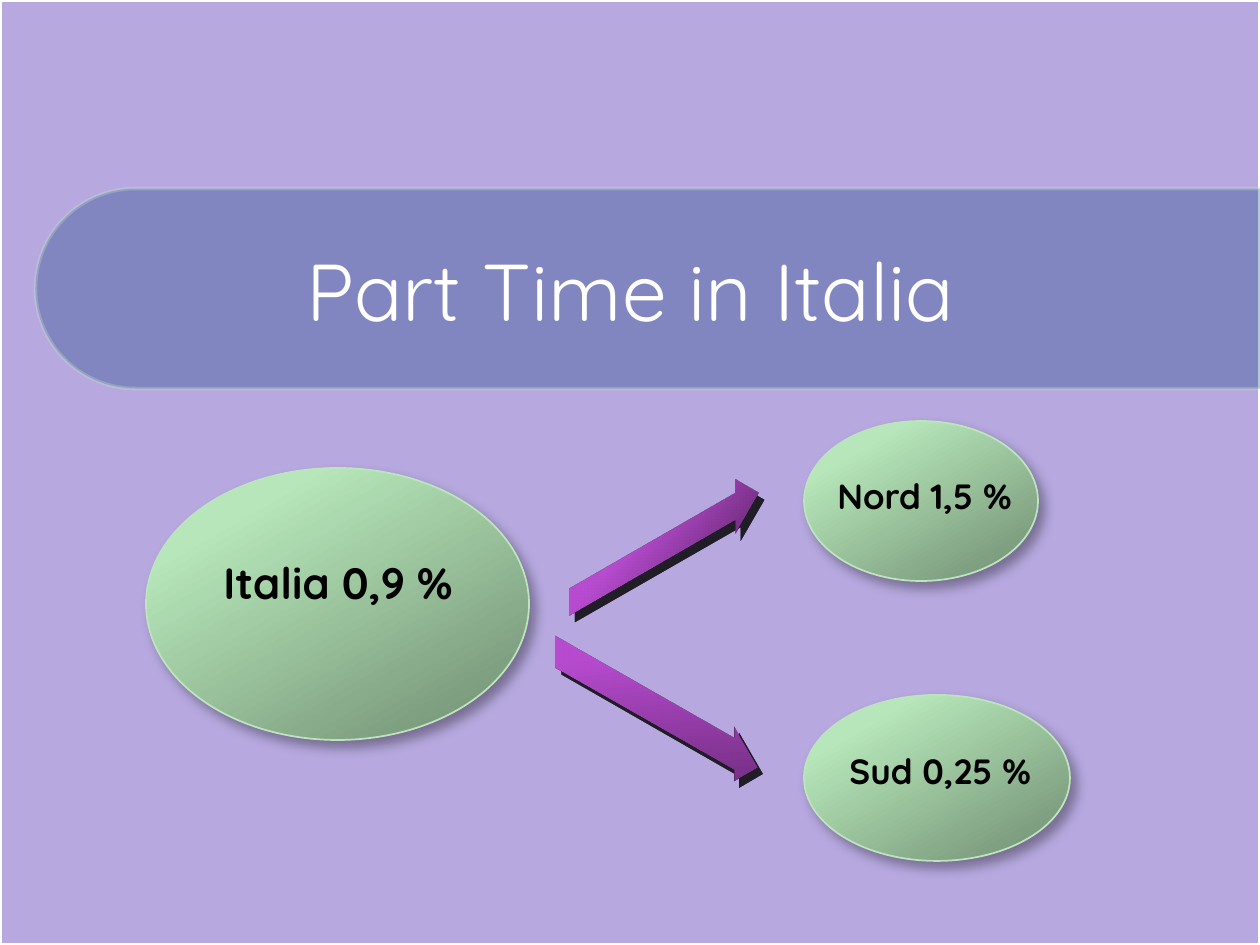
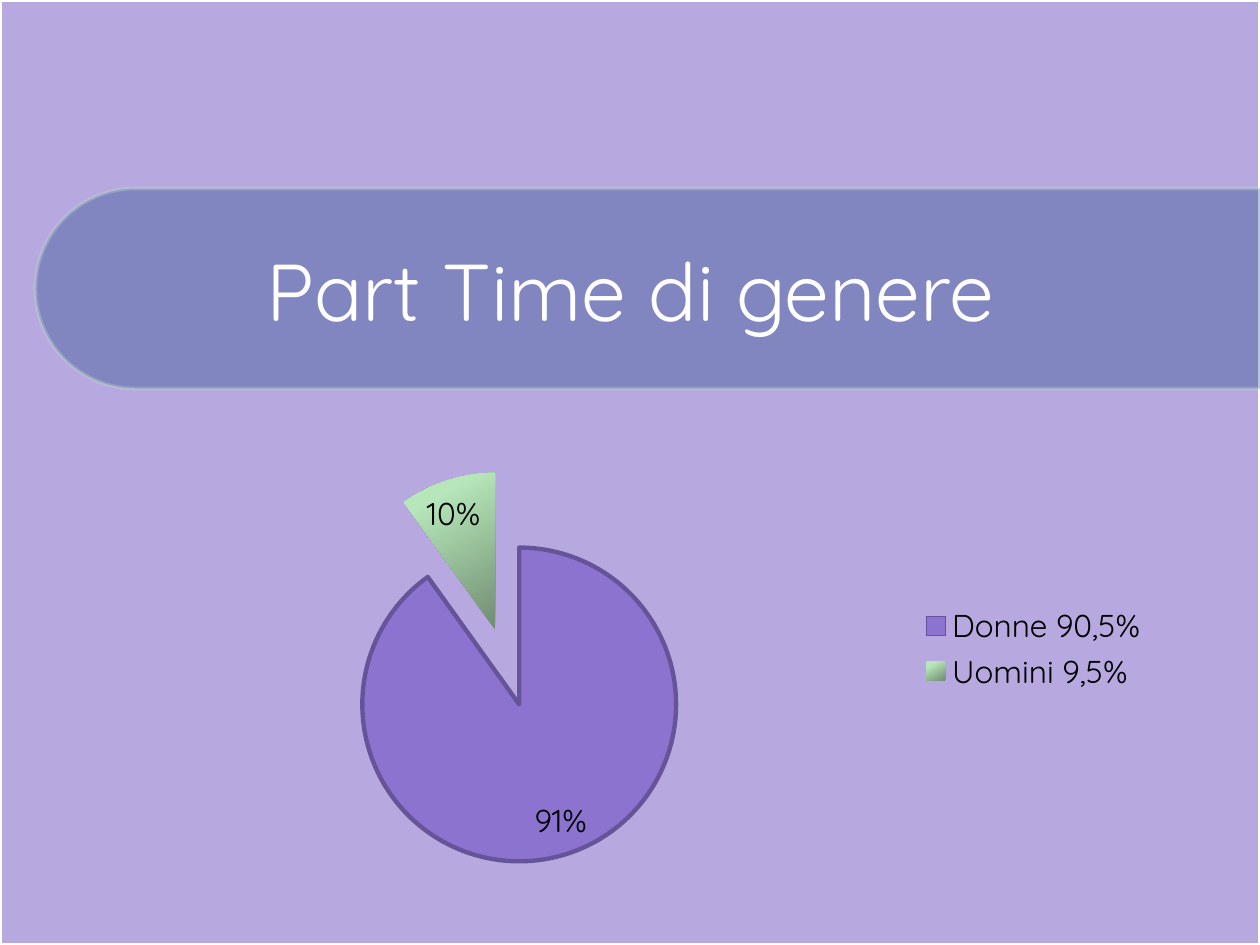
from pptx import Presentation
from pptx.chart.data import CategoryChartData
from pptx.dml.color import RGBColor
from pptx.enum.chart import XL_CHART_TYPE, XL_LABEL_POSITION, XL_LEGEND_POSITION
from pptx.enum.shapes import MSO_SHAPE
from pptx.enum.text import MSO_ANCHOR, PP_ALIGN
from pptx.oxml import parse_xml
from pptx.oxml.ns import nsdecls, qn
from pptx.util import Emu, Pt

PIE = XL_CHART_TYPE.PIE
BEST_FIT = XL_LABEL_POSITION.BEST_FIT
LEGEND_RIGHT = XL_LEGEND_POSITION.RIGHT
RECTANGLE = MSO_SHAPE.RECTANGLE
ROUNDED_TOP = MSO_SHAPE.ROUND_2_SAME_RECTANGLE
ELLIPSE = MSO_SHAPE.OVAL
ARROW = MSO_SHAPE.RIGHT_ARROW
TOP, MIDDLE = MSO_ANCHOR.TOP, MSO_ANCHOR.MIDDLE
LEFT, CENTER = PP_ALIGN.LEFT, PP_ALIGN.CENTER

FONT = "Quicksand"
EMU_PER_PX = 914400 / 126
WHITE = RGBColor(0xFF, 0xFF, 0xFF)
BLACK = RGBColor(0x00, 0x00, 0x00)
LILAC = RGBColor(0xB7, 0xA9, 0xE0)
NAVY = RGBColor(0x07, 0x37, 0x79)
MINT = RGBColor(0xC2, 0xE8, 0xC4)
GREEN_DARK = RGBColor(0x70, 0x8D, 0x71)
GREEN_LIGHT = RGBColor(0xB6, 0xE6, 0xB9)
GREEN_LINE = RGBColor(0xBD, 0xE4, 0xBF)
PURPLE_DARK = RGBColor(0x71, 0x2E, 0x7F)
PURPLE_LIGHT = RGBColor(0xB8, 0x4C, 0xD0)
PURPLE_LINE = RGBColor(0xB2, 0x59, 0xC5)
VIOLET = RGBColor(0x8C, 0x73, 0xD0)
VIOLET_LINE = RGBColor(0x66, 0x54, 0x99)


def px(*lengths):
    return [Emu(round(length * EMU_PER_PX)) for length in lengths]


def set_gradient(fill, dark, light):
    fill.gradient()
    fill.gradient_angle = 120
    start, end = fill.gradient_stops
    start.color.rgb, start.position = dark, 0
    end.color.rgb, end.position = light, 0.8


def set_opacity(element, percent):
    color = element.find(".//" + qn("a:srgbClr"))
    color.append(parse_xml(f'<a:alpha {nsdecls("a")} val="{percent * 1000}"/>'))


def add_outlined(slide, kind, box, line_color, line_width):
    shape = slide.shapes.add_shape(kind, *px(*box))
    shape.shadow.inherit = False
    shape.line.color.rgb = line_color
    shape.line.width = Pt(line_width)
    return shape


def add_shaded(slide, kind, box, dark, light, line_color):
    shape = add_outlined(slide, kind, box, line_color, 1)
    set_gradient(shape.fill, dark, light)
    effects = shape._element.spPr.find(qn("a:effectLst"))
    effects.append(parse_xml(
        f'<a:outerShdw {nsdecls("a")} blurRad="{Pt(7)}" dist="{Pt(5)}" dir="3000000" rotWithShape="0">'
        '<a:srgbClr val="000000"><a:alpha val="35000"/></a:srgbClr></a:outerShdw>'))
    return shape


def add_text(slide, text, box, size, color=BLACK, bold=True, align=LEFT, anchor=TOP):
    frame = slide.shapes.add_textbox(*px(*box)).text_frame
    frame.word_wrap = True
    frame.vertical_anchor = anchor
    paragraph = frame.paragraphs[0]
    paragraph.text = text
    paragraph.alignment = align
    font = paragraph.font
    font.name, font.size, font.bold = FONT, Pt(size), bold
    font.color.rgb = color
    return paragraph


def add_titled_slide(deck, title):
    slide = deck.slides.add_slide(deck.slide_layouts[6])
    background = slide.background.fill
    background.solid()
    background.fore_color.rgb = LILAC
    border = add_outlined(slide, RECTANGLE, (0, 0, 1260, 945), WHITE, 2)
    border.fill.background()

    band = add_outlined(slide, ROUNDED_TOP, (548, -324, 200, 1225), MINT, 2)
    band.rotation = 270
    band.adjustments[0] = 0.5
    band.adjustments[1] = 0
    band.fill.solid()
    band.fill.fore_color.rgb = NAVY
    properties = band._element.spPr
    set_opacity(properties.find(qn("a:solidFill")), 30)
    set_opacity(properties.find(qn("a:ln")), 30)

    heading = add_text(slide, title, (99, 189, 1063, 199), 46, WHITE, False, CENTER, MIDDLE)
    heading.line_spacing = Pt(56)
    return slide


def add_region(slide, box):
    add_shaded(slide, ELLIPSE, box, GREEN_DARK, GREEN_LIGHT, GREEN_LINE)


def add_isometric_arrow(slide, box, camera):
    arrow = add_shaded(slide, ARROW, box, PURPLE_DARK, PURPLE_LIGHT, PURPLE_LINE)
    properties = arrow._element.spPr
    properties.append(parse_xml(
        f'<a:scene3d {nsdecls("a")}><a:camera prst="{camera}"/>'
        '<a:lightRig rig="threePt" dir="t"/></a:scene3d>'))
    properties.append(parse_xml(f'<a:sp3d {nsdecls("a")} prstMaterial="matte"/>'))
    return arrow


def place_plot(chart, x, y, width, height):
    plot_area = chart._chartSpace.chart.plotArea
    for automatic in plot_area.findall(qn("c:layout")):
        plot_area.remove(automatic)
    plot_area.insert(0, parse_xml(
        f'<c:layout {nsdecls("c")}><c:manualLayout><c:layoutTarget val="inner"/>'
        '<c:xMode val="edge"/><c:yMode val="edge"/>'
        f'<c:x val="{x}"/><c:y val="{y}"/><c:w val="{width}"/><c:h val="{height}"/>'
        '</c:manualLayout></c:layout>'))


def add_gender_pie(slide, box):
    data = CategoryChartData()
    data.categories = ["Donne 90,5%", "Uomini 9,5%"]
    data.add_series("Series 1", (91, 10))
    chart = slide.shapes.add_chart(PIE, *px(*box), data).chart
    chart.has_title = False
    chart.font.name, chart.font.size = FONT, Pt(18)
    chart.font.color.rgb = BLACK
    chart.has_legend = True
    chart.legend.position = LEGEND_RIGHT
    chart.legend.include_in_layout = False
    place_plot(chart, 0.2, 0.12, 0.37, 0.84)

    plot = chart.plots[0]
    plot.vary_by_categories = True
    plot.has_data_labels = True
    labels = plot.data_labels
    labels.show_value = True
    labels.show_percentage = False
    labels.number_format, labels.number_format_is_linked = '0"%"', False
    labels.position = BEST_FIT

    series = plot.series[0]
    women, men = series.points[0].format, series.points[1].format
    women.fill.solid()
    women.fill.fore_color.rgb = VIOLET
    women.line.color.rgb = VIOLET_LINE
    women.line.width = Pt(2.5)
    set_gradient(men.fill, GREEN_DARK, GREEN_LIGHT)
    men.line.fill.background()
    first_point = series._element.find(qn("c:dPt"))
    first_point.addprevious(parse_xml(f'<c:explosion {nsdecls("c")} val="25"/>'))


def main():
    deck = Presentation()
    deck.slide_width, deck.slide_height = px(1260, 945)

    italy = add_titled_slide(deck, "Part Time in Italia")
    add_region(italy, (146, 468, 383, 272))
    add_text(italy, "Italia 0,9 %", (202, 550, 272, 66), 25, align=CENTER)
    add_region(italy, (804, 421, 234, 160))
    add_region(italy, (804, 695, 266, 166))
    add_isometric_arrow(italy, (530, 514, 268, 67), "isometricRightUp")
    sud_arrow = add_isometric_arrow(italy, (514, 676, 285, 67), "isometricLeftDown")
    sud_arrow.adjustments[0] = 0.585
    add_text(italy, "Nord 1,5 %", (825, 468, 223, 55), 20)
    add_text(italy, "Sud 0,25 %", (837, 743, 212, 55), 20)

    gender = add_titled_slide(deck, "Part Time di genere")
    add_gender_pie(gender, (98, 415, 1063, 467))

    deck.save("out.pptx")


if __name__ == "__main__":
    main()
